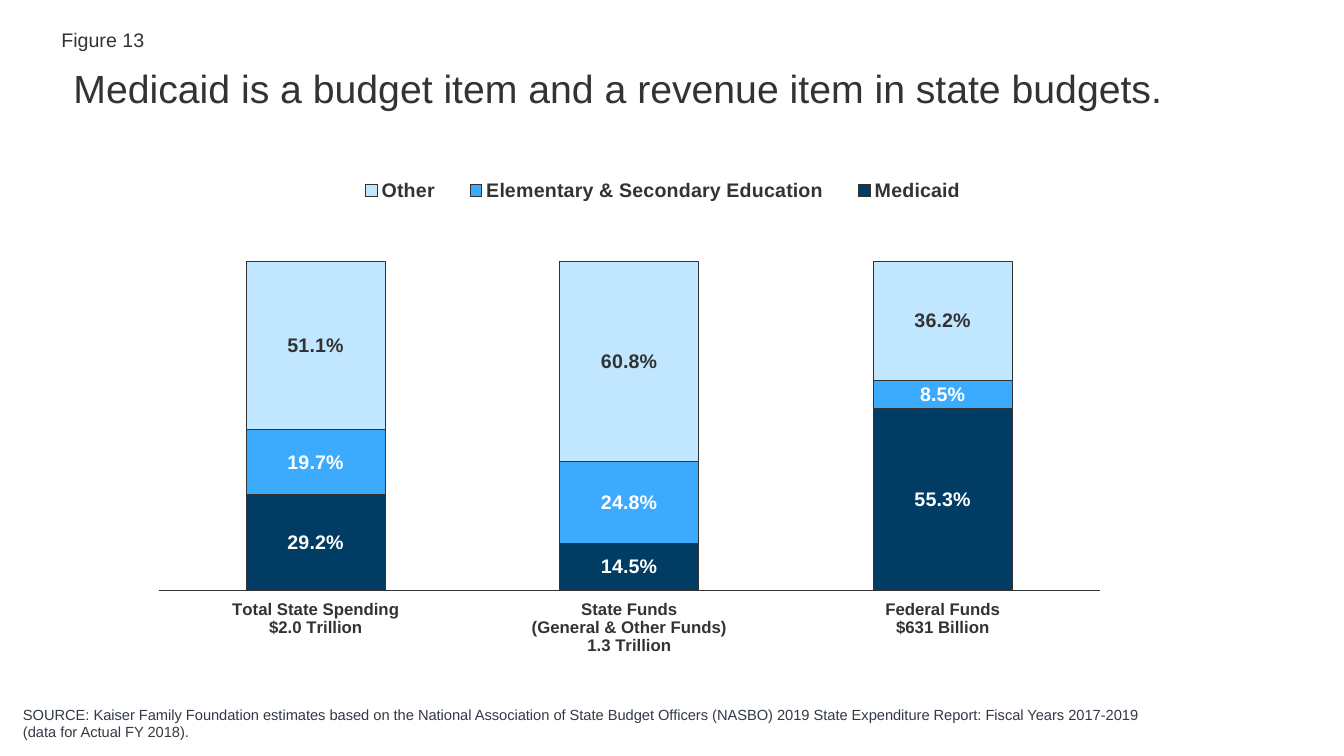
from lxml.etree import SubElement
from pptx import Presentation
from pptx.chart.data import CategoryChartData
from pptx.dml.color import RGBColor
from pptx.enum.chart import XL_CHART_TYPE, XL_LABEL_POSITION, XL_LEGEND_POSITION, XL_TICK_LABEL_POSITION, XL_TICK_MARK
from pptx.enum.text import MSO_ANCHOR
from pptx.oxml.ns import qn
from pptx.util import Inches, Pt

INK = "333333"
WHITE = "FFFFFF"
CATEGORIES = [
    "Total State Spending\n$2.0 Trillion",
    "State Funds\n(General & Other Funds)\n1.3 Trillion",
    "Federal Funds\n$631 Billion",
]
SERIES = [
    ("Medicaid", (29.2, 14.5, 55.3), "003C64", WHITE),
    ("Elementary & Secondary Education", (19.7, 24.8, 8.5), "3CABFD", WHITE),
    ("Other", (51.1, 60.8, 36.2), "C1E6FF", INK),
]


def color(hex_string):
    return RGBColor.from_string(hex_string)


class BudgetSlide:
    """Style and page; boxes are left, top, width, height in tenth-inch grid cells."""

    font_name = "Arial"
    cell = Inches(0.1)

    def __init__(self, deck):
        self.page = deck.slides.add_slide(deck.slide_layouts[6])

    def place(self, box):
        return [round(length * self.cell) for length in box]

    def style(self, font, size, fill=INK, bold=False):
        font.name, font.size, font.bold = self.font_name, Pt(size), bold
        font.color.rgb = color(fill)

    def outline(self, line):
        line.color.rgb = color(INK)
        line.width = Pt(0.75)

    def text(self, words, box, size, fill=INK, anchor=MSO_ANCHOR.TOP):
        frame = self.page.shapes.add_textbox(*self.place(box)).text_frame
        frame.word_wrap = True
        frame.vertical_anchor = anchor
        span = frame.paragraphs[0].add_run()
        span.text = words
        self.style(span.font, size, fill)

    def arrange(self, parent, successor, percents, inner=False):
        for old in parent.findall(qn("c:layout")):
            parent.remove(old)
        layout = SubElement(parent, qn("c:layout"))
        manual = SubElement(layout, qn("c:manualLayout"))
        settings = [("layoutTarget", "inner")] if inner else []
        settings += [("xMode", "edge"), ("yMode", "edge")]
        settings += [(key, str(value / 100)) for key, value in zip("xywh", percents)]
        for tag, value in settings:
            SubElement(manual, qn(f"c:{tag}")).set("val", value)
        following = parent.find(qn(successor))
        if following is not None:
            following.addprevious(layout)

    def stacked_chart(self, box, plot_percents, legend_percents):
        data = CategoryChartData(number_format="0.0%")
        data.categories = CATEGORIES
        for name, percents, _, _ in SERIES:
            data.add_series(name, [round(value / 100, 3) for value in percents])
        chart = self.page.shapes.add_chart(
            XL_CHART_TYPE.COLUMN_STACKED_100, *self.place(box), data
        ).chart
        chart.has_title = False
        self.style(chart.font, 10, bold=True)
        plot = chart.plots[0]
        plot.gap_width, plot.overlap = 125, 100
        plot.vary_by_categories = False
        for series, (_, _, fill, label_fill) in zip(plot.series, SERIES):
            self.paint(series, fill, label_fill)
        self.axes(chart)
        chart.has_legend = True
        legend = chart.legend
        legend.position = XL_LEGEND_POSITION.RIGHT
        legend.include_in_layout = False
        self.style(legend.font, 14, bold=True)
        plot_area = plot._element.getparent()
        self.arrange(plot_area, "c:barChart", plot_percents, inner=True)
        self.arrange(legend._element, "c:overlay", legend_percents)

    def paint(self, series, fill, label_fill):
        series.format.fill.solid()
        series.format.fill.fore_color.rgb = color(fill)
        self.outline(series.format.line)
        labels = series.data_labels
        labels.show_value = True
        labels.position = XL_LABEL_POSITION.CENTER
        labels.number_format = "0.0%"
        labels.number_format_is_linked = False
        self.style(labels.font, 14, label_fill, bold=True)

    def axes(self, chart):
        chart.value_axis.visible = False
        chart.value_axis.has_major_gridlines = False
        chart.value_axis.maximum_scale = 1
        chart.value_axis.minimum_scale = 0
        axis = chart.category_axis
        axis.major_tick_mark = XL_TICK_MARK.NONE
        axis.tick_label_position = XL_TICK_LABEL_POSITION.LOW
        self.outline(axis.format.line)
        self.style(axis.tick_labels.font, 12, bold=True)


def main():
    deck = Presentation()
    deck.slide_width, deck.slide_height = Inches(13.33), Inches(7.5)
    slide = BudgetSlide(deck)
    slide.text("Figure 13", (5.1, 2.2, 51.5, 3.5), 14, anchor=MSO_ANCHOR.MIDDLE)
    slide.text(
        "Medicaid is a budget item and a revenue item in state budgets.",
        (6.3, 5.9, 115.5, 8.3), 28,
    )
    slide.stacked_chart((14.2, 14.3, 98, 54.2), (1.6, 21.5, 95.2, 60.3), (19.6, 5, 66, 7))
    slide.text(
        "SOURCE: Kaiser Family Foundation estimates based on the National Association of "
        "State Budget Officers (NASBO) 2019 State Expenditure Report: Fiscal Years 2017-2019 "
        "(data for Actual FY 2018).",
        (1.3, 68, 116, 6), 10.5, "323A45", MSO_ANCHOR.BOTTOM,
    )
    deck.save("out.pptx")


if __name__ == "__main__":
    main()
